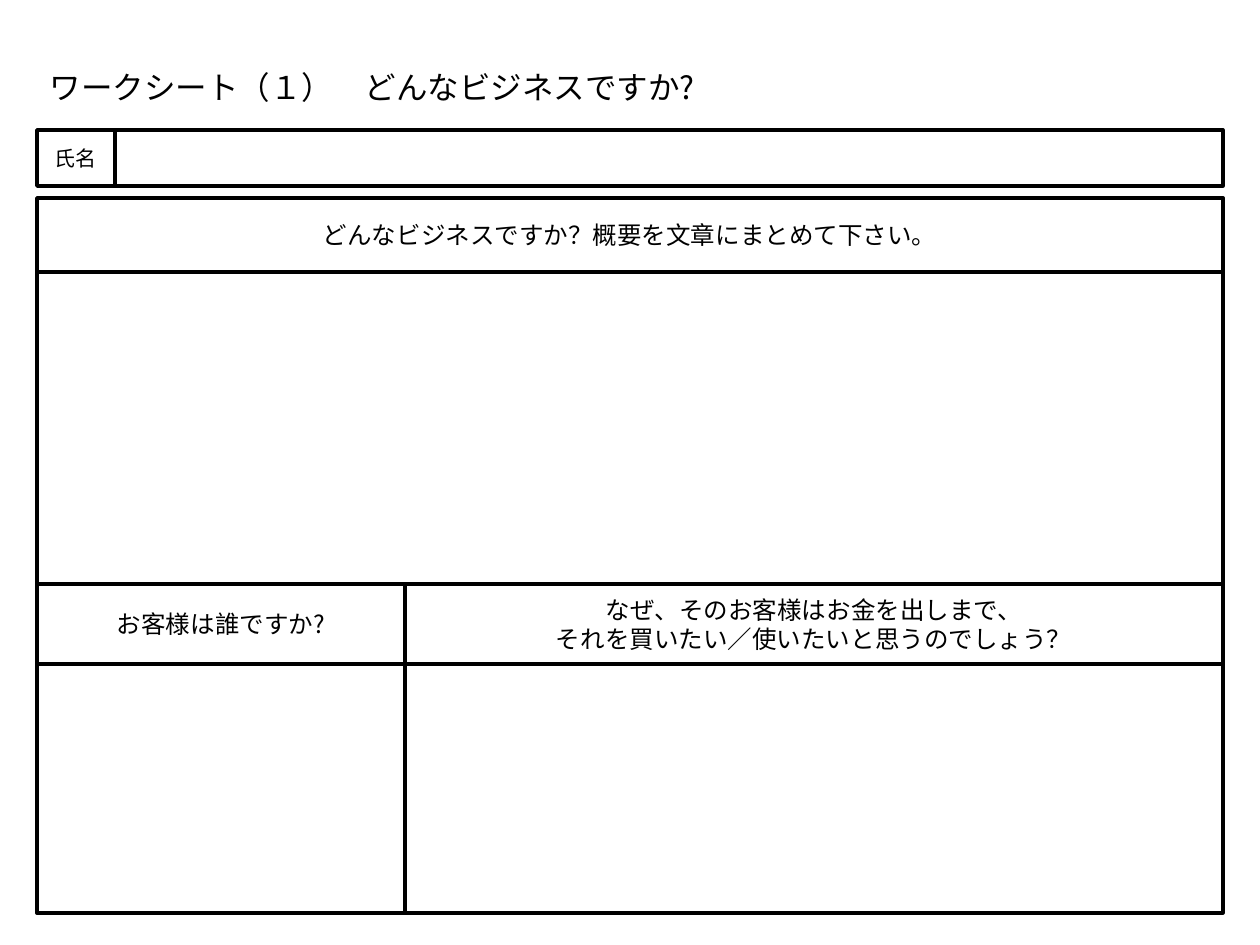
from dataclasses import dataclass

from lxml.etree import SubElement
from pptx import Presentation
from pptx.dml.color import RGBColor
from pptx.enum.shapes import MSO_SHAPE
from pptx.enum.text import MSO_ANCHOR, MSO_AUTO_SIZE, PP_ALIGN
from pptx.oxml.ns import qn
from pptx.slide import Slide
from pptx.text.text import TextFrame
from pptx.util import Emu, Pt

PIXELS_PER_INCH = 126
FONT = "Noto Sans CJK JP"
COLORS = {"ink": "000000", "paper": "FFFFFF"}

LEFT, NAME_SPLIT, COLUMN_SPLIT, RIGHT = 37, 115, 405, 1223
NAME_TOP, NAME_BOTTOM = 130, 186
OVERVIEW_TOP, OVERVIEW_BODY, DETAIL_TOP, DETAIL_BODY, BOTTOM = 198, 272, 584, 664, 913


@dataclass(frozen=True)
class Box:
    left: int
    top: int
    right: int
    bottom: int
    lines: tuple[str, ...] = ()
    size: int = 14


BOXES = (
    Box(NAME_SPLIT, NAME_TOP, RIGHT, NAME_BOTTOM),
    Box(LEFT, NAME_TOP, NAME_SPLIT, NAME_BOTTOM, ("氏名",), 12),
    Box(LEFT, OVERVIEW_BODY, RIGHT, DETAIL_TOP),
    Box(LEFT, OVERVIEW_TOP, RIGHT, OVERVIEW_BODY,
        ("どんなビジネスですか？概要を文章にまとめて下さい。",)),
    Box(LEFT, DETAIL_TOP, COLUMN_SPLIT, DETAIL_BODY, ("お客様は誰ですか?",)),
    Box(COLUMN_SPLIT, DETAIL_TOP, RIGHT, DETAIL_BODY,
        ("なぜ、そのお客様はお金を出しまで、",
         "それを買いたい／使いたいと思うのでしょう？")),
    Box(LEFT, DETAIL_BODY, COLUMN_SPLIT, BOTTOM),
    Box(COLUMN_SPLIT, DETAIL_BODY, RIGHT, BOTTOM),
)


def px(length: int) -> Emu:
    return Emu(round(length * 914400 / PIXELS_PER_INCH))


def color(name: str) -> RGBColor:
    return RGBColor.from_string(COLORS[name])


def write_lines(frame: TextFrame, lines: tuple[str, ...], size: int, alignment: PP_ALIGN) -> None:
    for index, line in enumerate(lines):
        paragraph = frame.add_paragraph() if index else frame.paragraphs[0]
        paragraph.alignment = alignment
        run = paragraph.add_run()
        run.text = line
        run.font.size = Pt(size)
        run.font.name = FONT
        run.font.color.rgb = color("ink")
        SubElement(run.font._element, qn("a:ea"), typeface=FONT)


def add_title(slide: Slide, text: str) -> None:
    title = slide.shapes.title
    title.left, title.top, title.width, title.height = px(LEFT), px(62), px(678), px(50)
    frame = title.text_frame
    frame.word_wrap = False
    frame.auto_size = MSO_AUTO_SIZE.SHAPE_TO_FIT_TEXT
    frame.vertical_anchor = MSO_ANCHOR.TOP
    write_lines(frame, (text,), 18, PP_ALIGN.LEFT)


def add_box(slide: Slide, box: Box) -> None:
    shape = slide.shapes.add_shape(
        MSO_SHAPE.RECTANGLE, px(box.left), px(box.top),
        px(box.right - box.left), px(box.bottom - box.top),
    )
    shape.shadow.inherit = False
    shape.fill.solid()
    shape.fill.fore_color.rgb = color("paper")
    shape.line.color.rgb = color("ink")
    shape.line.width = Pt(2)
    frame = shape.text_frame
    frame.word_wrap = True
    frame.vertical_anchor = MSO_ANCHOR.MIDDLE
    write_lines(frame, box.lines, box.size, PP_ALIGN.CENTER)


def main() -> None:
    presentation = Presentation()
    presentation.slide_width = px(1260)
    presentation.slide_height = px(945)
    slide = presentation.slides.add_slide(presentation.slide_layouts.get_by_name("Title Only"))
    add_title(slide, "ワークシート（１）　どんなビジネスですか?")
    for box in BOXES:
        add_box(slide, box)
    presentation.save("out.pptx")


if __name__ == "__main__":
    main()
